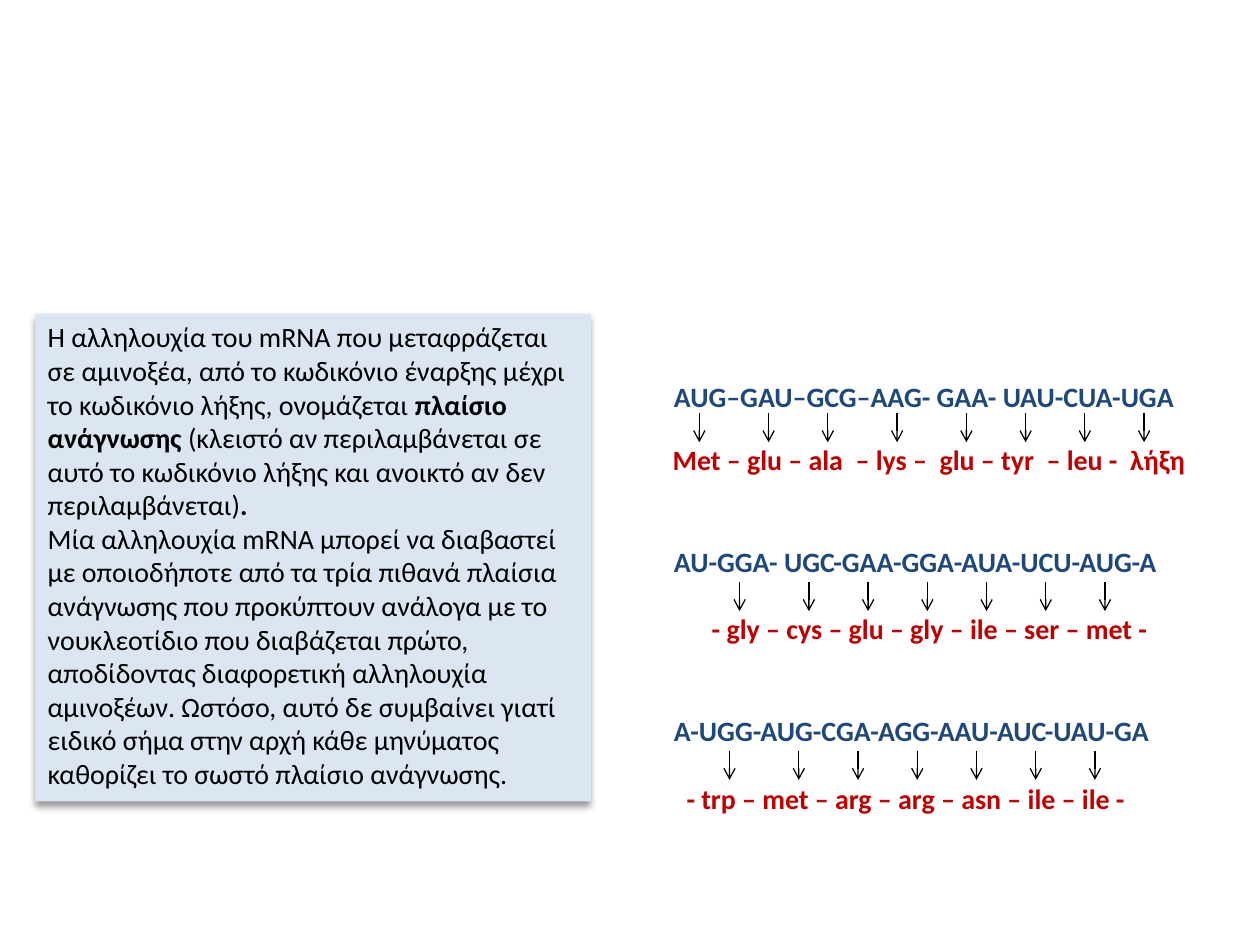
from itertools import accumulate

from lxml.etree import SubElement
from pptx import Presentation
from pptx.dml.color import RGBColor
from pptx.enum.shapes import MSO_CONNECTOR as Connector, MSO_SHAPE as Shape
from pptx.enum.text import MSO_ANCHOR as Anchor, MSO_AUTO_SIZE as AutoSize, PP_ALIGN as Align
from pptx.oxml import parse_xml
from pptx.oxml.ns import qn
from pptx.util import Inches, Pt

# Content: (text, bold) runs of each paragraph
DEFINITION = [
    [("Η αλληλουχία του mRNA που μεταφράζεται σε αμινοξέα, από το κωδικόνιο έναρξης "
      "μέχρι το κωδικόνιο λήξης, ονομάζεται ", False),
     ("πλαίσιο ανάγνωσης ", True),
     ("(κλειστό αν περιλαμβάνεται σε αυτό το κωδικόνιο λήξης και ανοικτό αν δεν "
      "περιλαμβάνεται)", False),
     (".", True)],
    [("Μία αλληλουχία mRNA μπορεί να διαβαστεί με οποιοδήποτε από τα τρία πιθανά πλαίσια "
      "ανάγνωσης που προκύπτουν ανάλογα με το νουκλεοτίδιο που διαβάζεται πρώτο, "
      "αποδίδοντας διαφορετική αλληλουχία αμινοξέων. Ωστόσο, αυτό δε συμβαίνει γιατί "
      "ειδικό σήμα στην αρχή κάθε μηνύματος καθορίζει το σωστό πλαίσιο ανάγνωσης.", False)],
]

# Arrow steps between neighbouring codons: wide where the text has an extra space
WIDE, NARROW = 0.55, 0.47

# Codons, amino acids, amino indent (in), gap above amino (pt), first arrow x, arrow steps
READING_FRAMES = [
    ("AUG–GAU–GCG–AAG- GAA- UAU-CUA-UGA",
     "Met – glu – ala  – lys –  glu – tyr  – leu -  λήξη",
     0.04, 17, 5.55, [WIDE, NARROW, WIDE, WIDE] + [NARROW] * 3),
    ("AU-GGA- UGC-GAA-GGA-AUA-UCU-AUG-A",
     "- gly – cys – glu – gly – ile – ser – met -",
     0.35, 19.5, 5.87, [WIDE] + [NARROW] * 5),
    ("A-UGG-AUG-CGA-AGG-AAU-AUC-UAU-GA",
     "- trp – met – arg – arg – asn – ile – ile -",
     0.15, 19.5, 5.79, [WIDE] + [NARROW] * 5),
]
CODON_INDENT, FRAME_GAP = 0.05, 39
ARROW_TOP, ARROW_LENGTH, FRAME_PITCH = 3.28, 0.23, 1.34

BLACK, BLUE, RED, PALE_BLUE = "000000", "1F497D", "C00000", "DCE6F2"


def color(hex_code):
    return RGBColor.from_string(hex_code)


def add_run(paragraph, text, hex_code, bold):
    run = paragraph.add_run()
    run.text = text
    run.font.name, run.font.size, run.font.bold = "Calibri", Pt(16), bold
    run.font.color.rgb = color(hex_code)


def next_paragraph(frame, first):
    paragraph = frame.paragraphs[0] if first else frame.add_paragraph()
    paragraph.alignment = Align.LEFT
    return paragraph


def prepare(frame):
    frame.word_wrap = True
    frame.auto_size = AutoSize.SHAPE_TO_FIT_TEXT
    frame.vertical_anchor = Anchor.TOP


def add_sequence(frame, text, hex_code, indent, gap):
    first = not frame.paragraphs[0].runs
    paragraph = next_paragraph(frame, first)
    if not first:
        paragraph.space_before = Pt(gap)
    properties = paragraph._p.get_or_add_pPr()
    properties.set("marL", str(Inches(indent)))
    properties.set("indent", "0")
    add_run(paragraph, text, hex_code, True)


def add_arrow(group, x, top):
    arrow = group.shapes.add_connector(
        Connector.STRAIGHT, Inches(x), Inches(top), Inches(x), Inches(top + ARROW_LENGTH))
    arrow.line.color.rgb = color(BLACK)
    arrow.line.width = Pt(0.75)
    SubElement(arrow.line._get_or_add_ln(), qn("a:tailEnd"), type="arrow")
    SubElement(arrow._element.spPr, qn("a:effectLst"))


presentation = Presentation()
presentation.slide_width, presentation.slide_height = Inches(10), Inches(7.5)
slide = presentation.slides.add_slide(presentation.slide_layouts[6])

# Codon and amino acid sequences
sequences = slide.shapes.add_textbox(
    Inches(5.2), Inches(2.96), Inches(4.52), Inches(3.57)).text_frame
prepare(sequences)
for codons, amino_acids, indent, gap, _, _ in READING_FRAMES:
    add_sequence(sequences, codons, BLUE, CODON_INDENT, FRAME_GAP)
    add_sequence(sequences, amino_acids, RED, indent, gap)

# Arrows from each codon to its amino acid
for row, (*_, first_x, steps) in enumerate(READING_FRAMES):
    arrows = slide.shapes.add_group_shape()
    for x in accumulate(steps, initial=first_x):
        add_arrow(arrows, x, ARROW_TOP + row * FRAME_PITCH)

# Definition panel with a soft shadow
panel = slide.shapes.add_shape(
    Shape.RECTANGLE, Inches(0.28), Inches(2.49), Inches(4.41), Inches(3.87))
panel.fill.solid()
panel.fill.fore_color.rgb = color(PALE_BLUE)
panel.line.fill.background()
panel._element.spPr.append(parse_xml(
    '<a:effectLst xmlns:a="http://schemas.openxmlformats.org/drawingml/2006/main">'
    f'<a:outerShdw blurRad="{Pt(4)}" dist="{Pt(3)}" dir="5400000" rotWithShape="0">'
    f'<a:srgbClr val="{BLACK}"><a:alpha val="40000"/></a:srgbClr>'
    '</a:outerShdw></a:effectLst>'))
prepare(panel.text_frame)
for index, runs in enumerate(DEFINITION):
    paragraph = next_paragraph(panel.text_frame, index == 0)
    for text, bold in runs:
        add_run(paragraph, text, BLACK, bold)

presentation.save("out.pptx")
